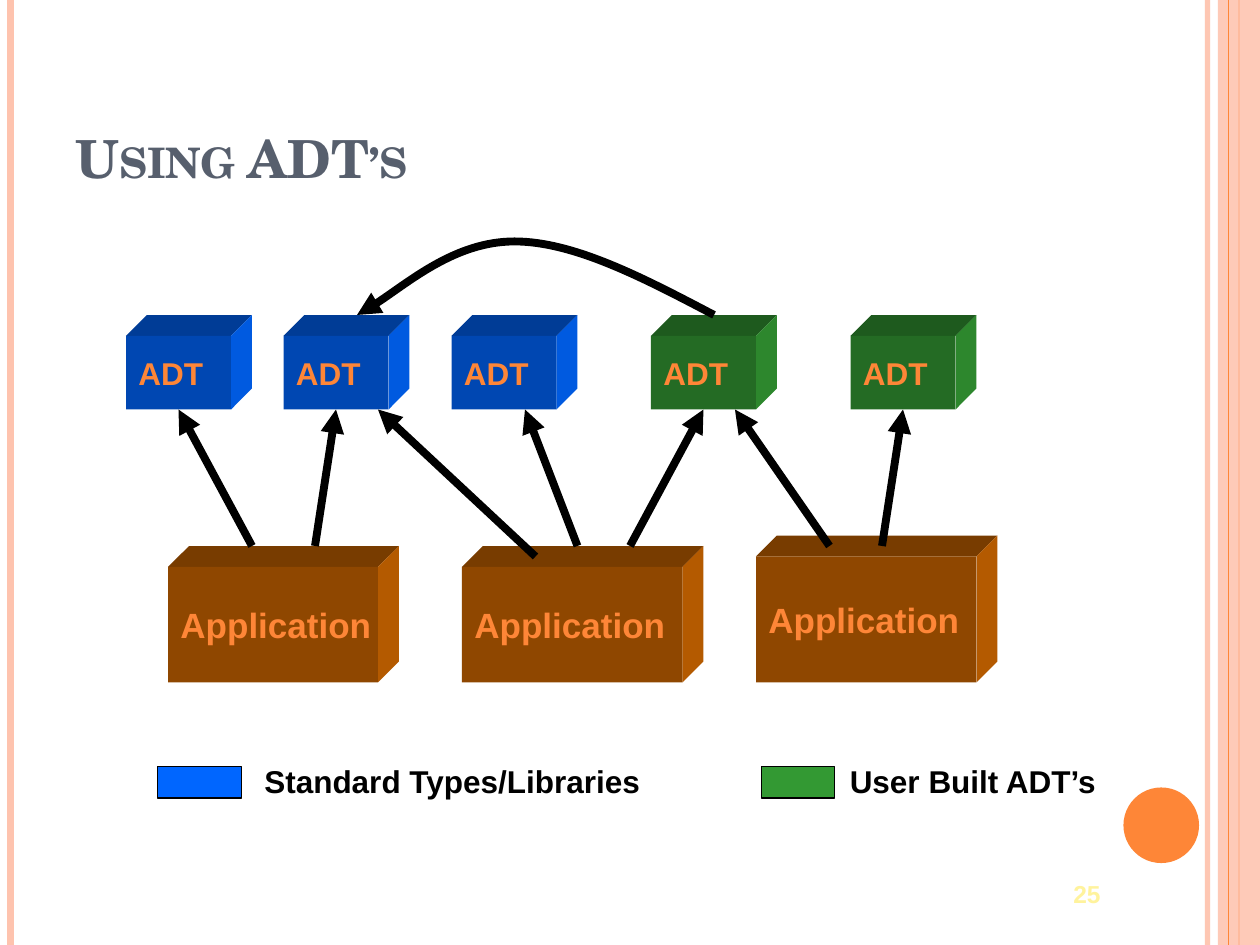
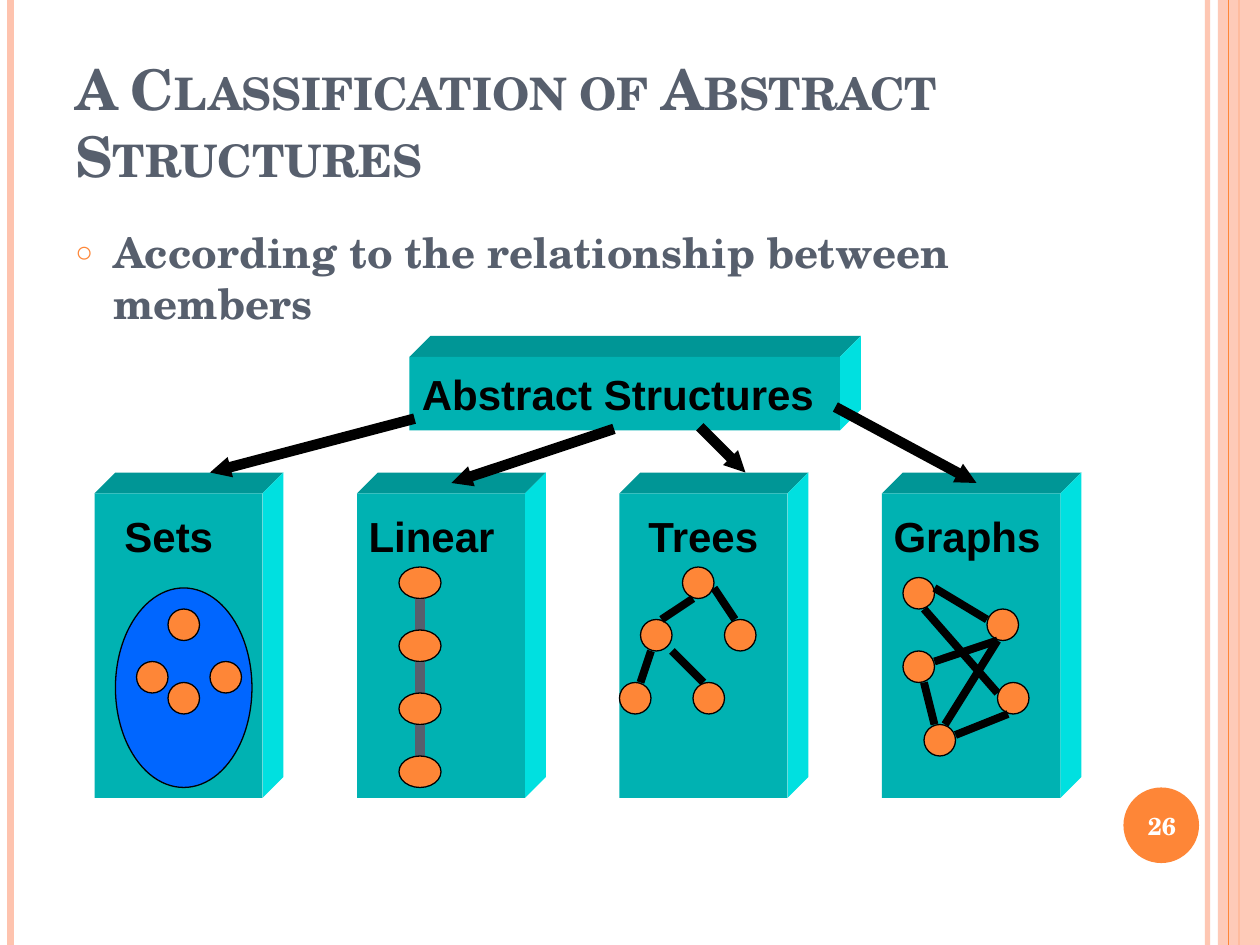
from lxml import etree
from pptx import Presentation
from pptx.dml.color import RGBColor
from pptx.enum.shapes import MSO_CONNECTOR, MSO_SHAPE
from pptx.enum.text import MSO_ANCHOR, PP_ALIGN
from pptx.oxml.ns import qn
from pptx.util import Pt

RECT, OVAL = MSO_SHAPE.RECTANGLE, MSO_SHAPE.OVAL
STRAIGHT = MSO_CONNECTOR.STRAIGHT
TOP, MIDDLE, BOTTOM = MSO_ANCHOR.TOP, MSO_ANCHOR.MIDDLE, MSO_ANCHOR.BOTTOM
LEFT, CENTER, RIGHT = PP_ALIGN.LEFT, PP_ALIGN.CENTER, PP_ALIGN.RIGHT
BOTTOM_SIDE = 2

COLORS = {
    "orange": "FE8637", "peach": "FEC3AE", "slate": "575F6D", "black": "000000",
    "white": "FFFFFF", "yellow": "FFF39D", "blue": "0066FF", "green": "339933",
    "brown": "CC6600", "cyan": "00FFFF",
}
SANS, SERIF = "Arial", "TeX Gyre Schola"
WIDTH, HEIGHT = 720, 540
DEPTH = 12  # how far a block reaches back, up and to the right
FRONT_SHADE, TOP_SHADE, SIDE_SHADE = 0.7, 0.59, 0.88
NODE = 18


def rgb(name, shade=1):
    return RGBColor(*(round(part * shade) for part in RGBColor.from_string(COLORS[name])))


def add_xml(parent, tag, **attributes):
    return etree.SubElement(parent, qn(tag), attributes)


def set_opacity(item, percent):
    for color in item._element.xpath("./p:spPr//a:srgbClr"):
        add_xml(color, "a:alpha", val=str(percent * 1000))


# Text
def put_text(frame, text, size=18, font=SANS, color="black", align=LEFT,
             anchor=TOP, wrap=False, small_caps=False):
    frame.word_wrap = wrap
    frame.vertical_anchor = anchor
    paragraph = frame.paragraphs[0]
    paragraph.alignment = align
    run = paragraph.add_run()
    run.text = text
    run.font.size, run.font.name, run.font.bold = Pt(size), font, True
    run.font.color.rgb = rgb(color)
    if small_caps:
        run._r.get_or_add_rPr().set("cap", "small")
    return paragraph


def add_label(slide, x, y, w, h, text, **text_format):
    label = slide.shapes.add_textbox(Pt(x), Pt(y), Pt(w), Pt(h))
    return put_text(label.text_frame, text, **text_format)


def add_title(slide, text, size):
    add_label(slide, 36, 21.6, 588, 90, text, size=size, font=SERIF,
              color="slate", anchor=BOTTOM, wrap=True, small_caps=True)


def add_bullet(slide, text):
    paragraph = add_label(slide, 36, 126, 588, 384, text, size=24, font=SERIF,
                          color="slate", wrap=True)
    paragraph.space_before = Pt(6)
    properties = paragraph._p.get_or_add_pPr()
    properties.set("marL", str(Pt(21.6)))
    properties.set("indent", str(Pt(-21.6)))
    add_xml(add_xml(properties, "a:buClr"), "a:srgbClr", val=COLORS["orange"])
    add_xml(properties, "a:buSzPct", val="70000")
    add_xml(properties, "a:buFont", typeface=SANS)
    add_xml(properties, "a:buChar", char="○")


# Shapes
def paint(shape, fill, shade=1, outline=None):
    shape.shadow.inherit = False
    shape.fill.solid()
    shape.fill.fore_color.rgb = rgb(fill, shade)
    if outline:
        shape.line.color.rgb = rgb(outline)
        shape.line.width = Pt(0.75)
    else:
        shape.line.fill.background()


def add_figure(slide, kind, x, y, w, h, fill, shade=1, outline=None):
    figure = slide.shapes.add_shape(kind, Pt(x), Pt(y), Pt(w), Pt(h))
    paint(figure, fill, shade, outline)
    return figure


def add_node(slide, x, y, w=NODE):
    add_figure(slide, OVAL, x, y, w, NODE, "orange", outline="black")


def draw_path(slide, points, close):
    builder = slide.shapes.build_freeform(Pt(points[0][0]), Pt(points[0][1]))
    builder.add_line_segments([(Pt(x), Pt(y)) for x, y in points[1:]], close=close)
    return builder.convert_to_shape()


def add_block(slide, x, y, w, h, color, text="", **text_format):
    """A rectangle with a top face and a right face behind it."""
    right, bottom = x + w, y + h
    back_corner = (right + DEPTH, y - DEPTH)
    top_face = [(x, y), (x + DEPTH, y - DEPTH), back_corner, (right, y)]
    side_face = [(right, y), back_corner, (right + DEPTH, bottom - DEPTH), (right, bottom)]
    for face, shade in ((top_face, TOP_SHADE), (side_face, SIDE_SHADE)):
        paint(draw_path(slide, face, True), color, shade)
    front = add_figure(slide, RECT, x, y, w, h, color, FRONT_SHADE)
    if text:
        put_text(front.text_frame, text, anchor=MIDDLE, **text_format)
    return front


# Lines
def add_arrowhead(item, size="med"):
    add_xml(item.line._get_or_add_ln(), "a:tailEnd", type="triangle", w=size, len=size)


def add_line(slide, x1, y1, x2, y2, width=4.5, color="black", head=None):
    line = slide.shapes.add_connector(STRAIGHT, Pt(x1), Pt(y1), Pt(x2), Pt(y2))
    line.line.color.rgb = rgb(color)
    line.line.width = Pt(width)
    if head:
        add_arrowhead(line, head)
    add_xml(line._element.spPr, "a:effectLst")
    return line


def add_curved_arrow(slide, points):
    """A start point followed by three points for each Bézier segment."""
    curve = draw_path(slide, points, False)
    curve.shadow.inherit = False
    curve.fill.background()
    curve.line.color.rgb = rgb("black")
    curve.line.width = Pt(4.5)
    add_arrowhead(curve)
    outline = curve._element.xpath(".//a:path")[0]
    steps = outline.findall(qn("a:lnTo"))
    for first in range(0, len(steps), 3):
        bezier = add_xml(outline, "a:cubicBezTo")
        for step in steps[first:first + 3]:
            bezier.append(step[0])
            outline.remove(step)


# Shared frame of both slides
def add_base(presentation):
    slide = presentation.slides.add_slide(presentation.slide_layouts[6])
    slide.background.fill.solid()
    slide.background.fill.fore_color.rgb = rgb("white")

    def stripe(x, width, color):
        return add_line(slide, x, 0, x, HEIGHT, width, color)

    set_opacity(stripe(690, 3, "peach"), 93)
    stripe(6, 4.5, "peach")
    stripe(708, 1.5, "orange")
    set_opacity(add_figure(slide, RECT, 696, 0, 24, HEIGHT, "peach"), 87)
    stripe(702, 0.75, "orange")
    add_figure(slide, OVAL, 642, 450, 43.2, 43.2, "orange")
    return slide


def build_using_adts(presentation):
    slide = add_base(presentation)
    add_title(slide, "Using ADT’s", 30)

    # ADTs and the applications that use them
    adts = [add_block(slide, x, 192, 60, 42, color, "ADT", color_name)
            for x, color, color_name in ()]
    adts = []
    for x, color in ((72, "blue"), (162, "blue"), (258, "blue"),
                     (372, "green"), (486, "green")):
        adt = add_block(slide, x, 192, 60, 42, color)
        put_text(adt.text_frame, "ADT", color="orange", anchor=MIDDLE)
        adts.append(adt)
    for x, y, w, h in ((96, 324, 120, 66), (264, 324, 126, 66), (432, 318, 126, 72)):
        application = add_block(slide, x, y, w, h, "brown")
        put_text(application.text_frame, "Application", size=20, color="orange",
                 anchor=MIDDLE)

    # Uses: start, end, and the ADT whose bottom middle is met
    for x1, y1, x2, adt in ((144, 312, 102, 0), (180, 312, 192, 1),
                            (306, 318, 216, None), (330, 312, 300, None),
                            (360, 312, 402, 3), (474, 312, 420, None),
                            (504, 312, 516, 4)):
        use = add_line(slide, x1, y1, x2, 234, head="med")
        if adt is not None:
            use.end_connect(adts[adt], BOTTOM_SIDE)
    add_curved_arrow(slide, [(408, 180), (368, 159), (328, 138), (294, 138),
                             (260, 138), (219, 172.8), (204, 180)])

    # Legend
    for x, w, color, label_x, label_w, label in (
            (90, 48, "blue", 144, 230, "Standard Types/Libraries"),
            (435, 42, "green", 478.5, 156, "User Built ADT’s")):
        add_figure(slide, RECT, x, 438, w, 18, color, outline="black")
        add_label(slide, label_x, 432, label_w, 29, label)
    add_label(slide, 560, 496, 76, 29, "25", size=14, color="yellow",
              align=RIGHT, anchor=MIDDLE, wrap=True)


def build_classification(presentation):
    slide = add_base(presentation)
    add_title(slide, "A Classification of Abstract Structures", 32)
    add_bullet(slide, "According to the relationship between members")

    # Root and its four kinds
    add_block(slide, 234, 204, 246, 42, "cyan", "Abstract Structures", size=24)
    kinds = (("Sets", 64, 70, 96), ("Linear", 203.5, 96, 96),
             ("Trees", 363.5, 86, 96), ("Graphs", 503.5, 104, 102))
    for column, (kind, label_x, label_w, w) in enumerate(kinds):
        add_block(slide, 54 + 150 * column, 282, w, 174, "cyan")
        add_label(slide, label_x, 288, label_w, 36, kind, size=24)
    for ends in ((234, 240, 120, 270), (480, 234, 558, 276),
                 (348, 246, 258, 276), (402, 246, 426, 270)):
        branch = add_line(slide, *ends, width=6, head="sm")
        branch.line._get_or_add_ln().set("cap", "sq")

    # Set
    add_figure(slide, OVAL, 66, 336, 78, 114, "blue", outline="black")
    set_nodes = [(96, 348), (120, 378), (96, 390), (78, 378)]

    # Linear chain
    for row in range(4):
        y = 324 + 36 * row
        add_node(slide, 228, y, 24)
        if row < 3:
            add_line(slide, 240, y + NODE, 240, y + 36, 6, "slate")

    # Tree and graph
    tree_nodes = [(390, 324), (366, 354), (414, 354), (396, 390), (354, 390)]
    graph_nodes = [(516, 330), (564, 348), (516, 372), (570, 390), (528, 414)]
    for x, y in set_nodes + tree_nodes + graph_nodes:
        add_node(slide, x, y)
    tree_edges = [(396, 342, 378, 354), (408, 336, 420, 354),
                  (372, 372, 366, 390), (384, 372, 402, 390)]
    graph_edges = [(528, 348, 570, 396), (534, 336, 564, 354), (570, 366, 534, 378),
                   (570, 366, 540, 414), (576, 408, 546, 420), (528, 390, 534, 414)]
    for edge in tree_edges + graph_edges:
        add_line(slide, *edge)

    add_label(slide, 640, 451.5, 48, 41, "26", size=14, font=SERIF, color="white",
              align=CENTER, anchor=MIDDLE, wrap=True)


def main():
    presentation = Presentation()
    presentation.slide_width, presentation.slide_height = Pt(WIDTH), Pt(HEIGHT)
    build_using_adts(presentation)
    build_classification(presentation)
    presentation.save("out.pptx")


if __name__ == "__main__":
    main()
